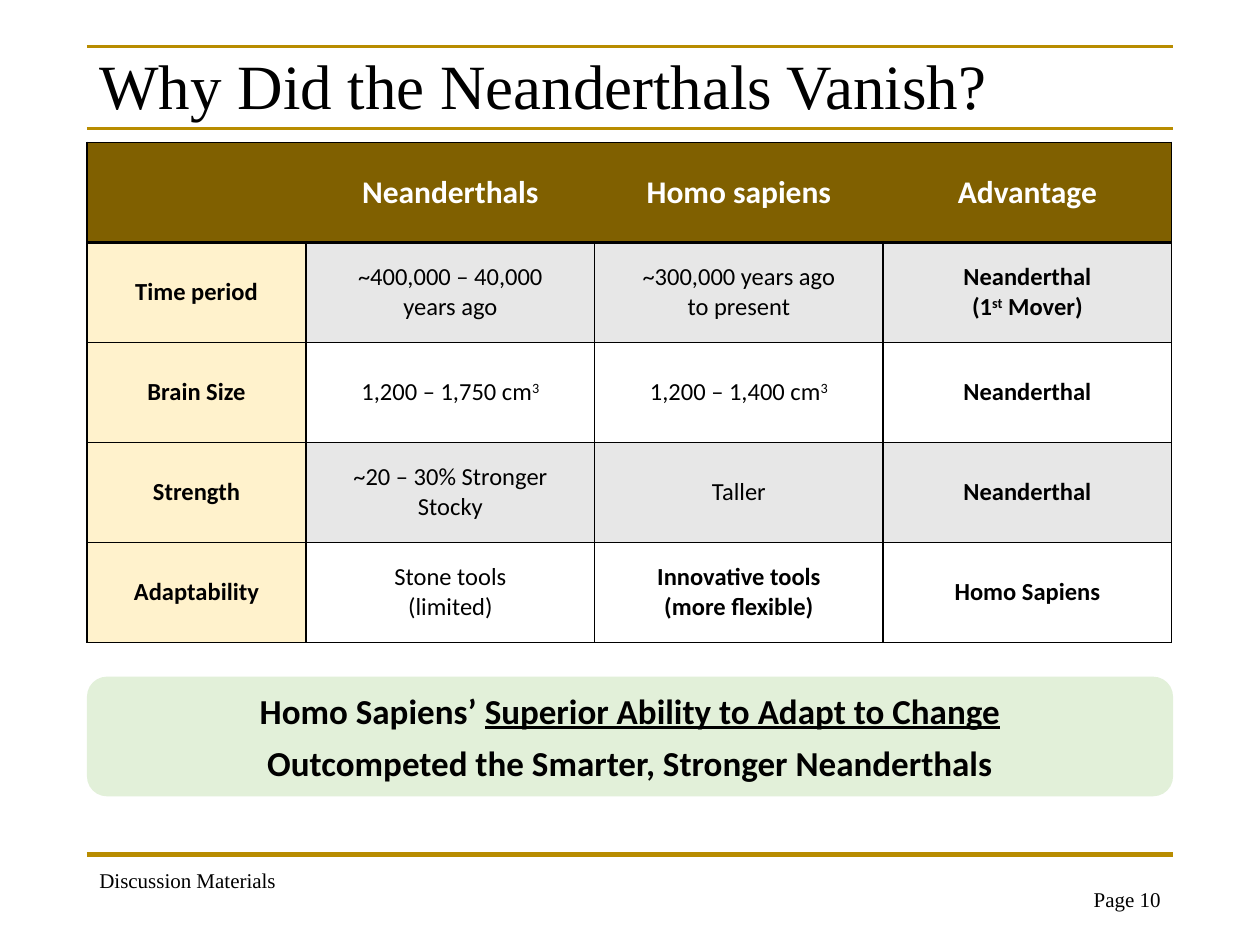
from lxml.etree import SubElement
from pptx import Presentation
from pptx.dml.color import RGBColor
from pptx.enum.shapes import MSO_CONNECTOR, MSO_SHAPE
from pptx.enum.text import MSO_ANCHOR, PP_ALIGN
from pptx.oxml.ns import qn
from pptx.util import Inches, Pt

BLACK = RGBColor(0x00, 0x00, 0x00)
WHITE = RGBColor(0xFF, 0xFF, 0xFF)
GOLD = RGBColor(0xB8, 0x8C, 0x00)
BROWN = RGBColor(0x80, 0x60, 0x00)
CREAM = RGBColor(0xFF, 0xF2, 0xCC)
GRAY = RGBColor(0xE7, 0xE7, 0xE7)
GREEN = RGBColor(0xE2, 0xF0, 0xD9)

LEFT, WIDTH = 0.69, 8.62

# Text between ^ marks is superscript; * marks a bold cell.
ROWS = [
    ["", "*Neanderthals", "*Homo sapiens", "*Advantage"],
    ["*Time period", "~400,000 – 40,000\nyears ago",
     "~300,000 years ago\nto present", "*Neanderthal\n(1^st^ Mover)"],
    ["*Brain Size", "1,200 – 1,750 cm^3^", "1,200 – 1,400 cm^3^", "*Neanderthal"],
    ["*Strength", "~20 – 30% Stronger\nStocky", "Taller", "*Neanderthal"],
    ["*Adaptability", "Stone tools\n(limited)",
     "*Innovative tools\n(more flexible)", "*Homo Sapiens"],
]


def style(font, name, size, color=BLACK, bold=False):
    font.name, font.size, font.bold = name, Pt(size), bold
    font.color.rgb = color


def add_border(cell, side, points):
    """Draw one cell edge (L, R, T or B) in black; zero points hides it."""
    edge = SubElement(cell._tc.get_or_add_tcPr(), qn(f"a:ln{side}"), w=str(Pt(points)))
    if points:
        fill = SubElement(edge, qn("a:solidFill"))
        SubElement(fill, qn("a:srgbClr"), val=str(BLACK))
    else:
        SubElement(edge, qn("a:noFill"))


prs = Presentation()
prs.slide_width, prs.slide_height = Inches(10), Inches(7.5)
slide = prs.slides.add_slide(prs.slide_layouts[6])
shapes = slide.shapes

# Gold rules
for y, weight in [(0.37, 2), (1.02, 2), (6.78, 3)]:
    rule = shapes.add_connector(MSO_CONNECTOR.STRAIGHT, Inches(LEFT), Inches(y),
                                Inches(LEFT + WIDTH), Inches(y))
    rule.line.color.rgb = GOLD
    rule.line.width = Pt(weight)
    SubElement(rule._element.spPr, qn("a:effectLst"))

# Title and footer
for text, x, y, width, height, size, align, anchor in [
    ("Why Did the Neanderthals Vanish?", LEFT, 0.4, WIDTH, 0.62, 36,
     PP_ALIGN.LEFT, MSO_ANCHOR.MIDDLE),
    ("Discussion Materials", LEFT, 6.84, 4, 0.3, 12, PP_ALIGN.LEFT, MSO_ANCHOR.TOP),
    ("Page 10", 6.84, 6.99, 2.47, 0.3, 12, PP_ALIGN.RIGHT, MSO_ANCHOR.TOP),
]:
    frame = shapes.add_textbox(Inches(x), Inches(y), Inches(width), Inches(height)).text_frame
    frame.word_wrap = True
    frame.vertical_anchor = anchor
    frame.text = text
    line = frame.paragraphs[0]
    line.alignment = align
    if size == 36:
        line.line_spacing = 0.9
    style(line.runs[0].font, "Times New Roman", size)

# Comparison table
comparison = shapes.add_table(len(ROWS), 4, Inches(LEFT), Inches(1.13),
                              Inches(WIDTH), Inches(3.97)).table
comparison.horz_banding = False
for column, width in zip(comparison.columns, [1.74, 2.29, 2.29, 2.29]):
    column.width = Inches(width)
for row in comparison.rows:
    row.height = Inches(3.97 / len(ROWS))

for r, row_texts in enumerate(ROWS):
    header = r == 0
    for c, text in enumerate(row_texts):
        cell = comparison.cell(r, c)
        add_border(cell, "L", 0 if header and c > 0 else 1)
        add_border(cell, "R", 0 if header and c < 3 else 1)
        add_border(cell, "T", 2 if r == 1 else 1)
        add_border(cell, "B", 2 if header else 1)
        cell.fill.solid()
        if header:
            cell.fill.fore_color.rgb = BROWN
        elif c == 0:
            cell.fill.fore_color.rgb = CREAM
        else:
            cell.fill.fore_color.rgb = GRAY if r % 2 else WHITE
        cell.vertical_anchor = MSO_ANCHOR.MIDDLE
        if not text:
            continue
        for i, line_text in enumerate(text.lstrip("*").split("\n")):
            frame = cell.text_frame
            line = frame.add_paragraph() if i else frame.paragraphs[0]
            line.alignment = PP_ALIGN.CENTER
            for part, piece in enumerate(line_text.split("^")):
                if not piece:
                    continue
                run = line.add_run()
                run.text = piece
                style(run.font, "Calibri", 18 if header else 14,
                      WHITE if header else BLACK, text.startswith("*"))
                if part % 2:
                    run._r.get_or_add_rPr().set("baseline", "30000")

# Conclusion
conclusion = shapes.add_shape(MSO_SHAPE.ROUNDED_RECTANGLE, Inches(LEFT), Inches(5.37),
                              Inches(WIDTH), Inches(0.95))
conclusion.shadow.inherit = False
conclusion.fill.solid()
conclusion.fill.fore_color.rgb = GREEN
conclusion.line.fill.background()
frame = conclusion.text_frame
frame.word_wrap = True
frame.vertical_anchor = MSO_ANCHOR.MIDDLE
frame.text = "Homo Sapiens’ \nOutcompeted the Smarter, Stronger Neanderthals"
opening, outcome = frame.paragraphs
emphasis = opening.add_run()
emphasis.text = "Superior Ability to Adapt to Change"
outcome.space_before = Pt(6)
for line in frame.paragraphs:
    line.alignment = PP_ALIGN.CENTER
    for run in line.runs:
        style(run.font, "Calibri", 20, bold=True)
emphasis.font.underline = True

prs.save("out.pptx")
